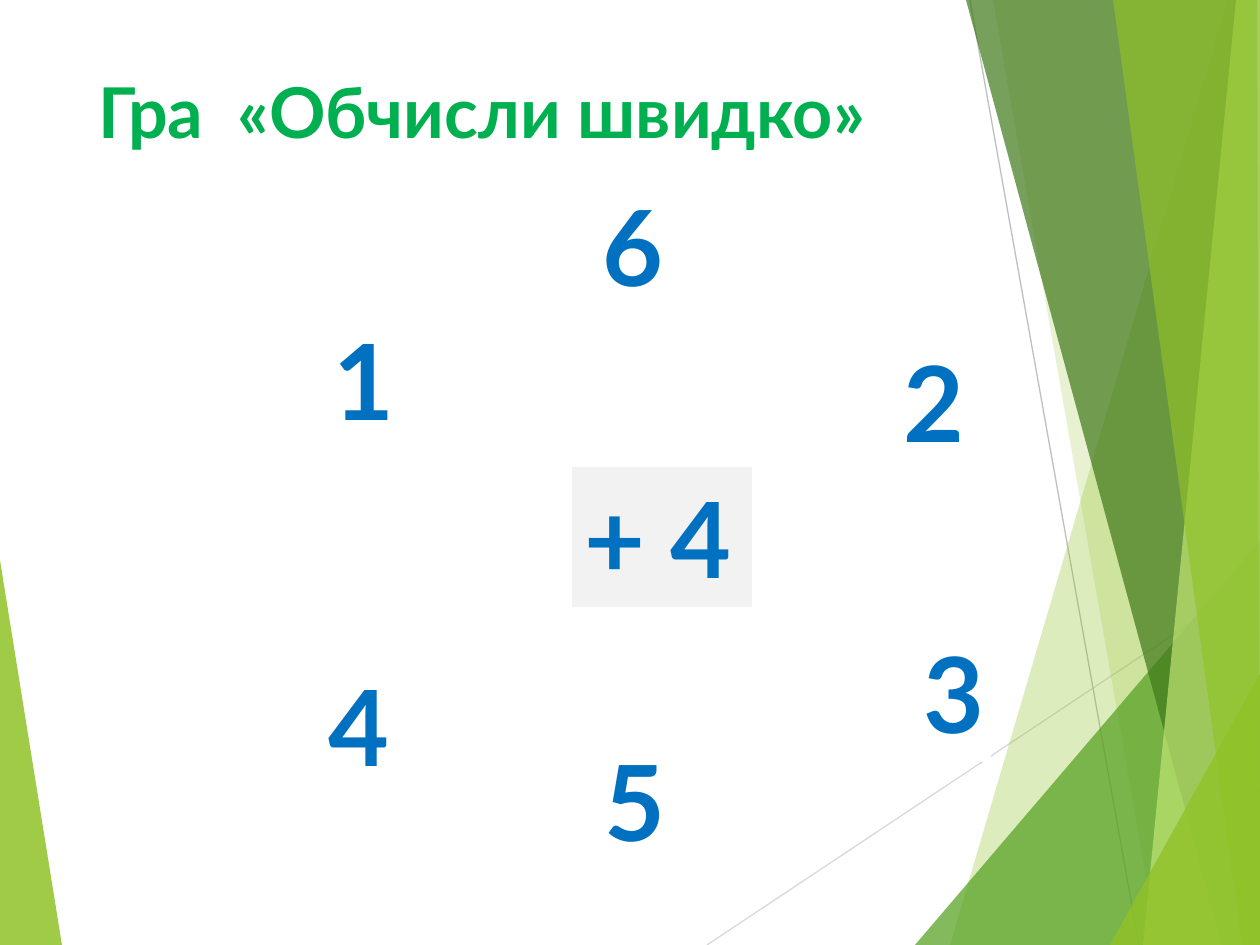
import lxml.etree
import pptx
import pptx.dml.color
import pptx.enum.shapes
import pptx.enum.text
import pptx.oxml.ns
import pptx.util

PX = 914400 / 126
WIDTH, HEIGHT = 1260, 945

THEME = {
    "font": "Lato",
    "title_size": 40,
    "number_size": 60,
    "title": "00B050",
    "number": "0070C0",
    "task_fill": "F2F2F2",
    "number_fill": "FFFFFF",
    "rising_line": "D9D9D9",
    "falling_line": "BFBFBF",
    "lime": "90C226",
    "light_lime": "C0E474",
    "green": "54A021",
    "dark_green": "3F7819",
}


def px(*lengths):
    return [pptx.util.Emu(round(length * PX)) for length in lengths]


def write(holder, text, size, colour):
    frame = holder.text_frame
    frame.word_wrap = False
    frame.auto_size = pptx.enum.text.MSO_AUTO_SIZE.SHAPE_TO_FIT_TEXT
    frame.vertical_anchor = pptx.enum.text.MSO_ANCHOR.TOP
    paragraph = frame.paragraphs[0]
    paragraph.alignment = pptx.enum.text.PP_ALIGN.LEFT
    run = paragraph.add_run()
    run.text = text
    run.font.name = THEME["font"]
    run.font.size = pptx.util.Pt(THEME[size])
    run.font.bold = True
    run.font.color.rgb = pptx.dml.color.RGBColor.from_string(THEME[colour])


deck = pptx.Presentation()
deck.slide_width, deck.slide_height = px(WIDTH, HEIGHT)
slide = deck.slides.add_slide(deck.slide_layouts[6])
shapes = slide.shapes

rays = [
    ((707, HEIGHT, WIDTH, 577), "rising_line"),
    ((970, 0, 1139, HEIGHT), "falling_line"),
]
for ends, colour in rays:
    ray = shapes.add_connector(pptx.enum.shapes.MSO_CONNECTOR.STRAIGHT, *px(*ends))
    ray.line.width = pptx.util.Pt(0.75)
    ray.line.color.rgb = pptx.dml.color.RGBColor.from_string(THEME[colour])
    lxml.etree.SubElement(ray._element.spPr, pptx.oxml.ns.qn("a:effectLst"))

corner = (WIDTH, HEIGHT)
top_corner = (WIDTH, 0)
facets = [
    ([(0, 560), (62, HEIGHT), (0, HEIGHT)], "lime", 85),
    ([(1228, 0), (950, HEIGHT), corner, top_corner], "lime", 30),
    ([(993, 0), (1158, HEIGHT), corner, top_corner], "lime", 20),
    ([(915, HEIGHT), (WIDTH, 541), corner], "green", 72),
    ([(966, 0), (1222, HEIGHT), corner, top_corner], "dark_green", 70),
    ([(1236, 0), (1143, HEIGHT), corner, top_corner], "light_lime", 70),
    ([(1113, 0), (1242, HEIGHT), corner, (1257, 0)], "lime", 65),
    ([(1110, HEIGHT), (WIDTH, 674), corner], "lime", 80),
]
for points, colour, opacity in facets:
    outline = shapes.build_freeform(*points[0], scale=PX)
    outline.add_line_segments(points[1:], close=True)
    facet = outline.convert_to_shape()
    facet.shadow.inherit = False
    facet.line.fill.background()
    facet.fill.solid()
    facet.fill.fore_color.rgb = pptx.dml.color.RGBColor.from_string(THEME[colour])
    tint = facet._element.spPr.find(".//" + pptx.oxml.ns.qn("a:srgbClr"))
    alpha = lxml.etree.SubElement(tint, pptx.oxml.ns.qn("a:alpha"))
    alpha.set("val", str(opacity * 1000))

title = shapes.add_textbox(*px(86, 62, 844, 97))
write(title, "Гра  «Обчисли швидко»", "title_size", "title")

cards = [
    ("+ 4", 572, 467, 180, "task_fill"),
    ("1", 321, 309, 80, "number_fill"),
    ("2", 891, 331, 80, "number_fill"),
    ("3", 911, 622, 80, "number_fill"),
    ("4", 316, 655, 80, "number_fill"),
    ("5", 592, 730, 80, "number_fill"),
    ("6", 590, 175, 80, "number_fill"),
]
for text, left, top, width, fill in cards:
    card = shapes.add_shape(
        pptx.enum.shapes.MSO_SHAPE.RECTANGLE, *px(left, top, width, 140)
    )
    card.shadow.inherit = False
    card.line.fill.background()
    card.fill.solid()
    card.fill.fore_color.rgb = pptx.dml.color.RGBColor.from_string(THEME[fill])
    write(card, text, "number_size", "number")

deck.save("out.pptx")
